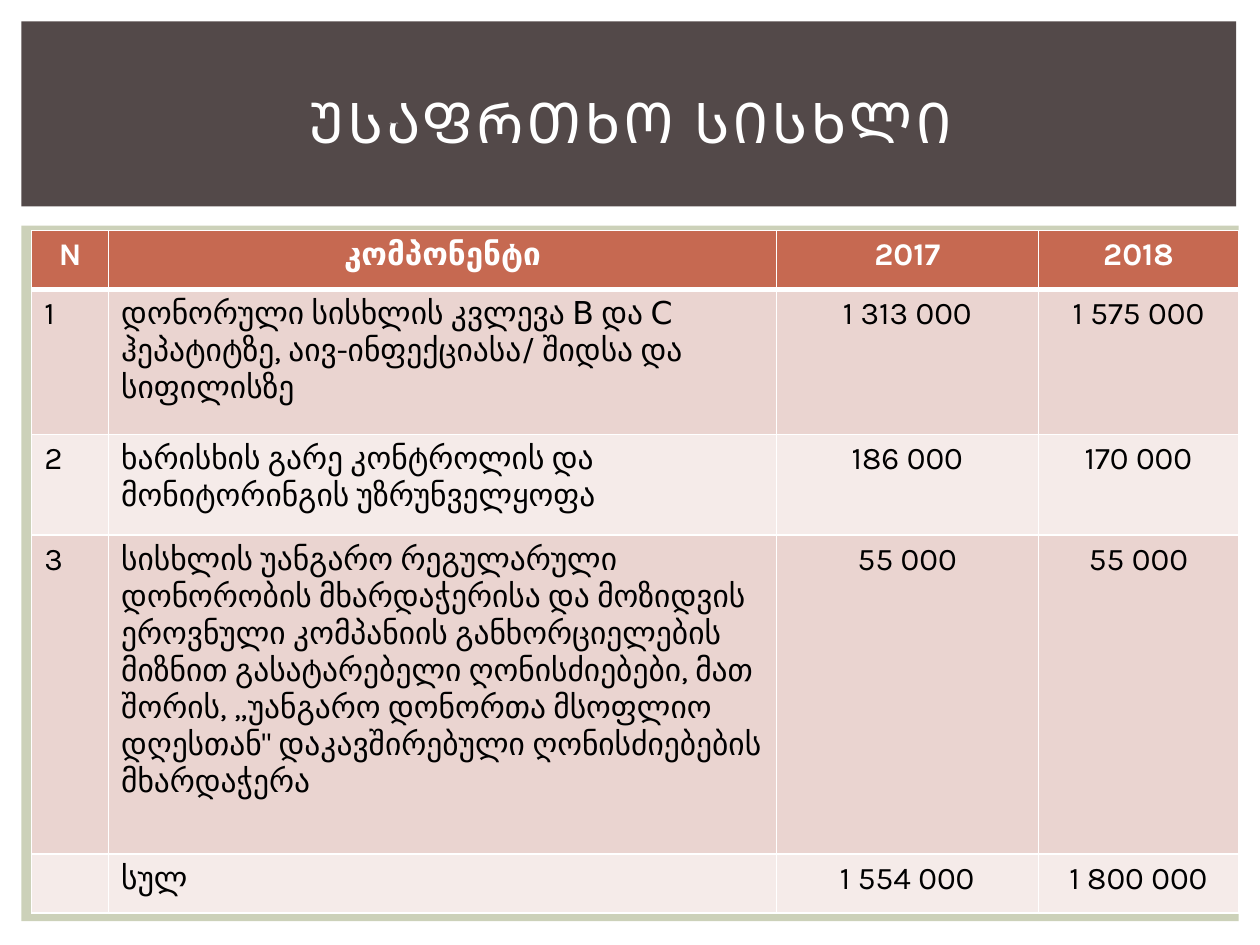
from lxml.etree import SubElement
from pptx import Presentation
from pptx.dml.color import RGBColor
from pptx.enum.shapes import MSO_SHAPE as Shape
from pptx.enum.text import MSO_ANCHOR as Anchor, MSO_AUTO_SIZE as AutoSize, PP_ALIGN as Align
from pptx.oxml.ns import qn
from pptx.util import Cm, Pt

FONT = "Karla"
WHITE, BLACK = "FFFFFF", "000000"
HEADER_FILL, BAND_FILLS = "C66951", ("EAD4D0", "F5EBE9")
COLUMN_WIDTHS = (1.55, 13.46, 5.28, 4.04)
ROW_HEIGHTS = (1.19, 2.92, 2.03, 6.43, 1.19)
ALIGNMENTS = (Align.LEFT, Align.LEFT, Align.CENTER, Align.CENTER)
ROWS = (
    ("N", "კომპონენტი", "2017", "2018"),
    ("1", "დონორული სისხლის კვლევა В და С ჰეპატიტზე, აივ-ინფექციასა/ შიდსა და სიფილისზე",
     "1 313 000", "1 575 000"),
    ("2", "ხარისხის გარე კონტროლის და მონიტორინგის უზრუნველყოფა", "186 000", "170 000"),
    ("3", "სისხლის უანგარო რეგულარული დონორობის მხარდაჭერისა და მოზიდვის ეროვნული "
     "კომპანიის განხორციელების მიზნით გასატარებელი ღონისძიებები, მათ შორის, „უანგარო "
     "დონორთა მსოფლიო დღესთან\" დაკავშირებული ღონისძიებების მხარდაჭერა",
     "55 000", "55 000"),
    ("", "სულ", "1 554 000", "1 800 000"),
)


def rgb(color):
    return RGBColor.from_string(color)


def format_text(frame, size, color, align, bold=False):
    for para in frame.paragraphs:
        para.alignment = align
        para.font.size = Pt(size)
        for span in para.runs:
            span.font.name = FONT
            span.font.size = Pt(size)
            span.font.bold = bold
            span.font.color.rgb = rgb(color)


def add_panel(slide, left, top, width, height, color):
    panel = slide.shapes.add_shape(Shape.RECTANGLE, Cm(left), Cm(top), Cm(width), Cm(height))
    panel.shadow.inherit = False
    panel.fill.solid()
    panel.fill.fore_color.rgb = rgb(color)
    panel.line.fill.background()


def place_title(slide, text):
    """Fill the title placeholder and bring it in front of the panels."""
    title = slide.shapes.title
    title.left, title.top, title.width, title.height = Cm(1.07), Cm(0.99), Cm(23.29), Cm(2.92)
    frame = title.text_frame
    frame.text = text
    frame.auto_size = AutoSize.NONE
    frame.vertical_anchor = Anchor.MIDDLE
    format_text(frame, 32, WHITE, Align.CENTER)
    for span in frame.paragraphs[0].runs:
        span.font._element.set("spc", "200")
    slide.shapes._spTree.append(title._element)


def set_borders(cell, bottom_width):
    """Draw white cell borders; they must precede the fill in the cell properties."""
    properties = cell._tc.get_or_add_tcPr()
    for side, width in (("L", 1), ("R", 1), ("T", 1), ("B", bottom_width)):
        line = SubElement(properties, qn(f"a:ln{side}"), w=str(Pt(width)))
        fill = SubElement(line, qn("a:solidFill"))
        SubElement(fill, qn("a:srgbClr"), val=WHITE)


def format_cell(cell, text, fill, color, align, is_header):
    cell.text = text
    format_text(cell.text_frame, 18, color, align, bold=is_header)
    set_borders(cell, bottom_width=3 if is_header else 1)
    cell.fill.solid()
    cell.fill.fore_color.rgb = rgb(fill)


def add_budget_table(slide):
    frame = slide.shapes.add_table(len(ROWS), len(COLUMN_WIDTHS), Cm(0.64), Cm(4.65),
                                   Cm(sum(COLUMN_WIDTHS)), Cm(sum(ROW_HEIGHTS)))
    table = frame.table
    for column, width in zip(table.columns, COLUMN_WIDTHS):
        column.width = Cm(width)
    for row_index, (row, height, texts) in enumerate(zip(table.rows, ROW_HEIGHTS, ROWS)):
        row.height = Cm(height)
        is_header = row_index == 0
        fill = HEADER_FILL if is_header else BAND_FILLS[(row_index - 1) % 2]
        color = WHITE if is_header else BLACK
        for cell, text, align in zip(row.cells, texts, ALIGNMENTS):
            format_cell(cell, text, fill, color, Align.CENTER if is_header else align, is_header)


def main():
    deck = Presentation()
    deck.slide_width, deck.slide_height = Cm(25.4), Cm(19.05)
    slide = deck.slides.add_slide(deck.slide_layouts[5])
    add_panel(slide, 0.43, 4.55, 24.54, 14.02, "CCD1B9")
    add_panel(slide, 0.43, 0.43, 24.49, 3.73, "534949")
    add_budget_table(slide)
    place_title(slide, "ᲣᲡᲐᲤᲠᲗᲮᲝ ᲡᲘᲡᲮᲚᲘ")
    deck.save("out.pptx")


if __name__ == "__main__":
    main()
